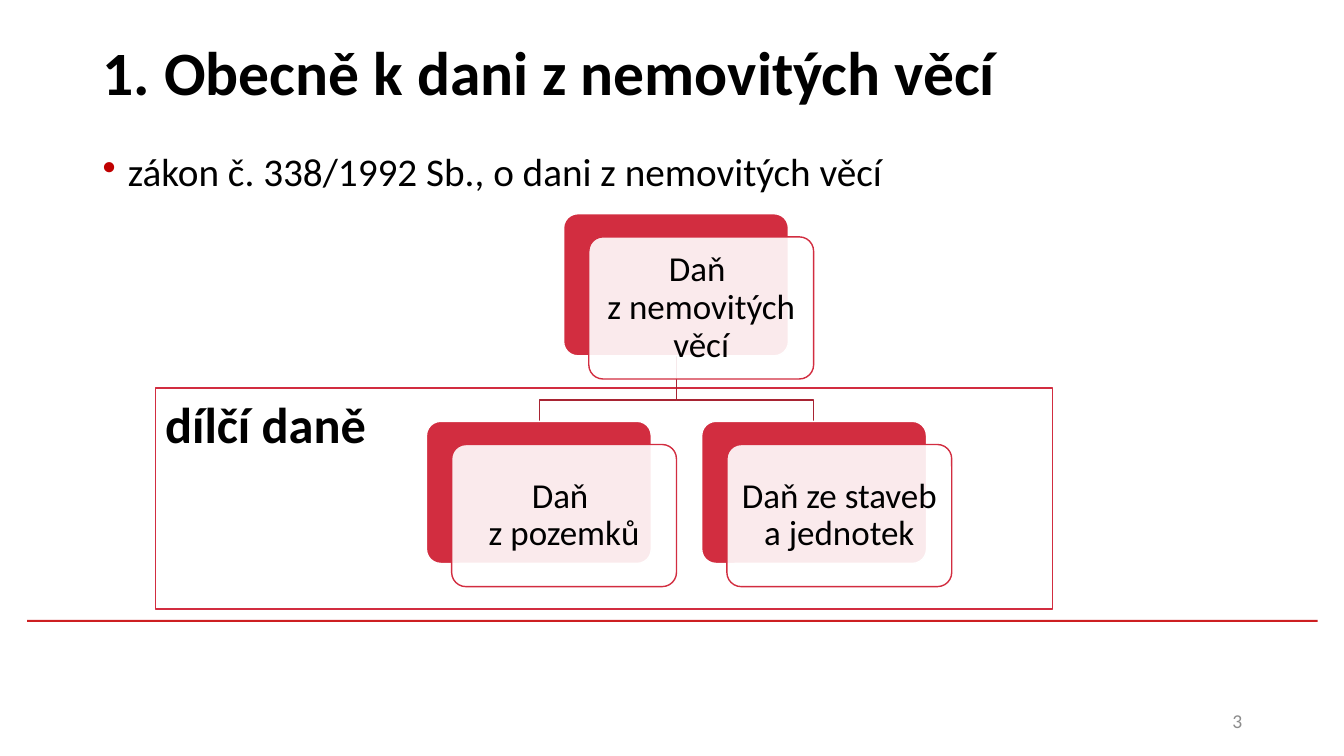
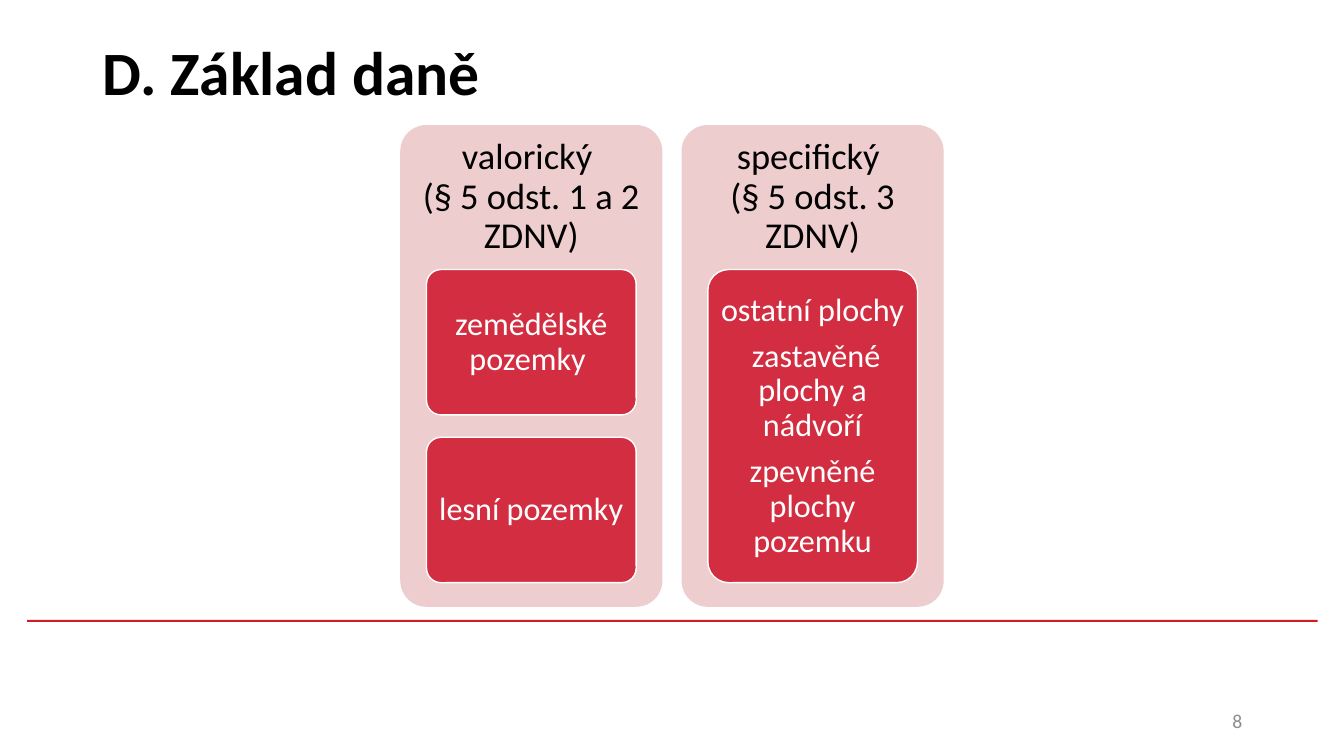
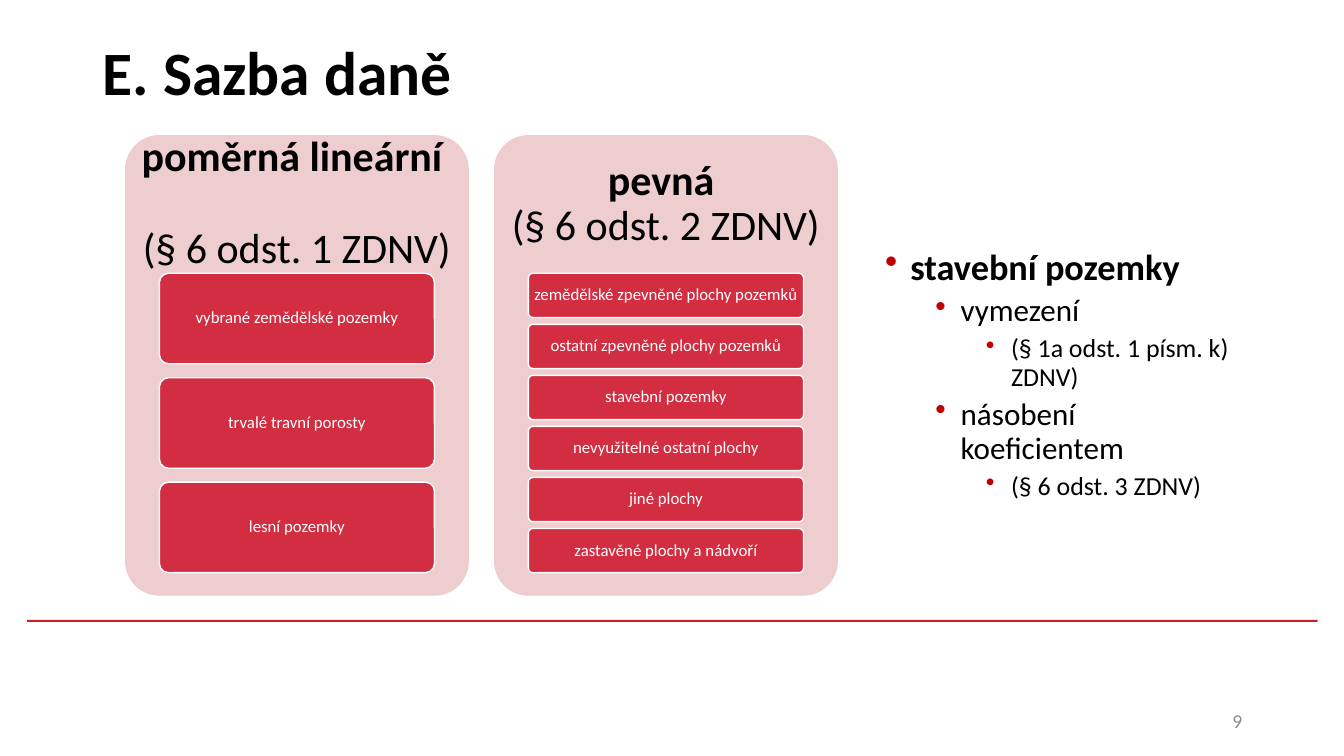
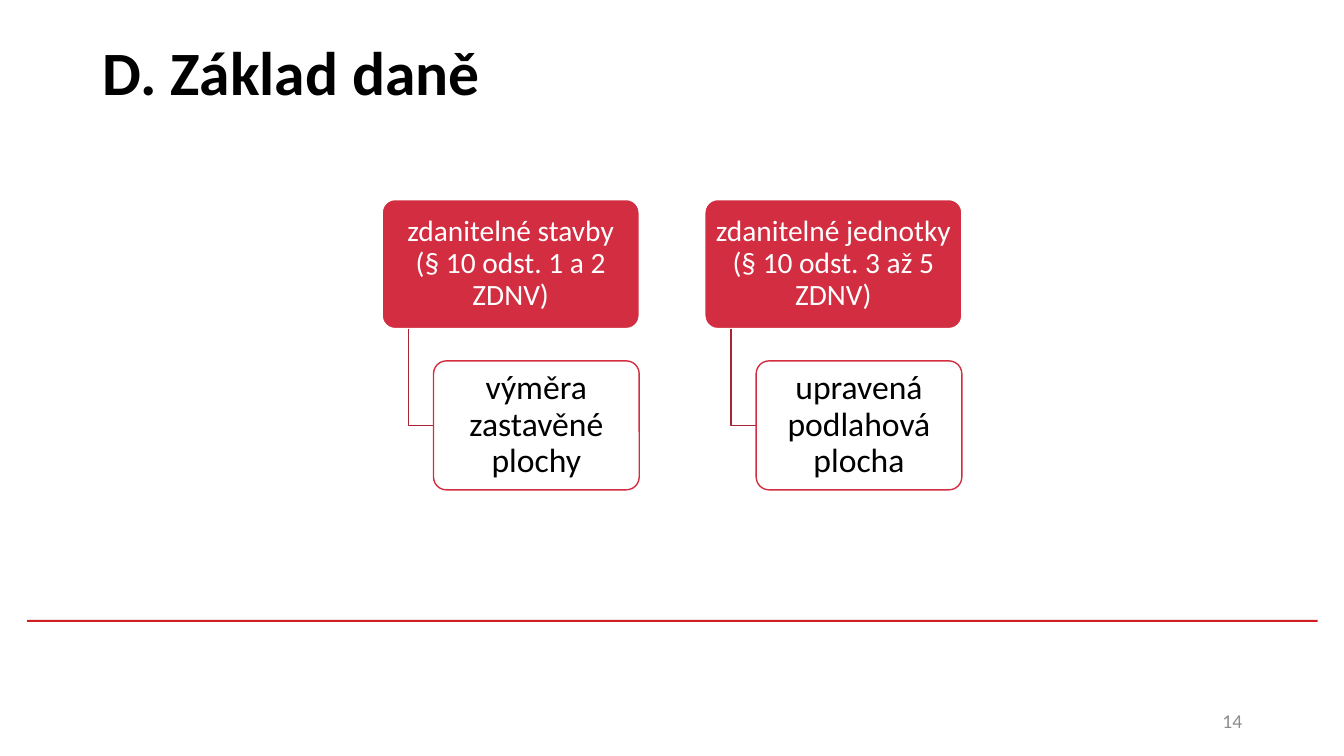
from dataclasses import dataclass
from typing import NamedTuple, Optional, Sequence

from lxml.etree import SubElement
from pptx import Presentation
from pptx.dml.color import RGBColor
from pptx.enum.shapes import MSO_SHAPE as Preset
from pptx.enum.text import MSO_ANCHOR as Anchor, PP_ALIGN as Align
from pptx.oxml.ns import qn
from pptx.util import Inches, Pt

FONT = "Calibri"
BLACK, WHITE, GREY = "000000", "FFFFFF", "8C8C8C"
RED, PINK, BRANCH, RULE, BULLET = "D22D40", "EECDCF", "A82433", "CD1F21", "C00000"
ITEM_GAP = 2 / 13


class Box(NamedTuple):
    left: float
    top: float
    width: float
    height: float

    def inches(self) -> list:
        return [Inches(length) for length in self]


@dataclass
class Para:
    text: str
    size: Optional[float] = None
    bold: Optional[bool] = None
    level: int = 0
    before: float = 0
    after: float = 0


@dataclass
class Column:
    header: Sequence[Para]
    items: Sequence[Sequence[Para]]


@dataclass
class Branch:
    head: str
    leaf: str


def rgb(color: str) -> RGBColor:
    return RGBColor.from_string(color)


def add_bullet(paragraph, level: int) -> None:
    props = paragraph._p.get_or_add_pPr()
    props.set("marL", str(Inches(0.25 + 0.5 * level)))
    props.set("indent", str(Inches(-0.25)))
    SubElement(SubElement(props, qn("a:buClr")), qn("a:srgbClr")).set("val", BULLET)
    SubElement(props, qn("a:buChar")).set("char", "•")


def write(frame, paras: Sequence[Para], *, size: float = 18, color: str = BLACK,
          bold: bool = False, align=Align.CENTER, anchor=Anchor.MIDDLE,
          inset: tuple = (0.1, 0.05), spacing: float = 0.9, bullets: bool = False) -> None:
    frame.word_wrap = True
    frame.vertical_anchor = anchor
    frame.margin_left = frame.margin_right = Inches(inset[0])
    frame.margin_top = frame.margin_bottom = Inches(inset[1])
    for index, para in enumerate(paras):
        paragraph = frame.add_paragraph() if index else frame.paragraphs[0]
        paragraph.text = para.text
        paragraph.alignment = align
        paragraph.line_spacing = spacing
        paragraph.space_after = Pt(para.after)
        if index:
            paragraph.space_before = Pt(para.before)
        if bullets:
            paragraph.level = para.level
            add_bullet(paragraph, para.level)
        for run in paragraph.runs:
            run.font.name = FONT
            run.font.size = Pt(para.size or size)
            run.font.bold = bold if para.bold is None else para.bold
            run.font.color.rgb = rgb(color)


def add_text(slide, box: Box, paras: Sequence[Para], **style) -> None:
    write(slide.shapes.add_textbox(*box.inches()).text_frame, paras, **style)


def add_panel(slide, box: Box, fill: str, line: Optional[str] = None, *,
              preset=Preset.ROUNDED_RECTANGLE, alpha: Optional[int] = None):
    panel = slide.shapes.add_shape(preset, *box.inches())
    panel.shadow.inherit = False
    if preset == Preset.ROUNDED_RECTANGLE:
        panel.adjustments[0] = 0.1
    panel.fill.solid()
    panel.fill.fore_color.rgb = rgb(fill)
    if alpha:
        tint = panel._element.spPr.find(qn("a:solidFill"))[0]
        SubElement(tint, qn("a:alpha")).set("val", str(alpha * 1000))
    if line:
        panel.line.color.rgb = rgb(line)
        panel.line.width = Pt(1)
    else:
        panel.line.fill.background()
    return panel


def add_branch_line(slide, points: Sequence[tuple]) -> None:
    corners = [(Inches(x), Inches(y)) for x, y in points]
    outline = slide.shapes.build_freeform(*corners[0])
    outline.add_line_segments(corners[1:], close=False)
    branch = outline.convert_to_shape()
    branch.shadow.inherit = False
    branch.fill.background()
    branch.line.color.rgb = rgb(BRANCH)
    branch.line.width = Pt(1)


def add_page(deck, title: str, number: int):
    slide = deck.slides.add_slide(deck.slide_layouts[6])
    add_panel(slide, Box(0.27, 6.15, 12.8, 0.02), RULE, preset=Preset.RECTANGLE)
    add_text(slide, Box(0.92, 0.02, 11.5, 1.45), [Para(title)],
             size=44, bold=True, align=Align.LEFT)
    add_text(slide, Box(9.42, 6.95, 3, 0.4), [Para(str(number))],
             size=14, color=GREY, align=Align.RIGHT, spacing=1)
    return slide


def add_tax_node(slide, left: float, top: float, label: str) -> None:
    width, height = 2.23, 1.41
    add_panel(slide, Box(left, top, width, height), RED, WHITE)
    front = add_panel(slide, Box(left + 0.25, top + 0.23, width, height), WHITE, RED, alpha=90)
    write(front.text_frame, [Para(label)], size=25, inset=(0.1, 0.1))


def add_column(slide, card: Box, column: Column, *, header_size: float, header_inset: float,
               item_size: float, item_inset: tuple) -> None:
    add_panel(slide, card, PINK)
    add_text(slide, card._replace(height=card.height * 0.3), column.header,
             size=header_size, inset=(header_inset, header_inset))
    count = len(column.items)
    height = card.height * 0.65 / (count + ITEM_GAP * (count - 1))
    for row, item in enumerate(column.items):
        top = card.top + card.height * 0.3 + row * height * (1 + ITEM_GAP)
        area = Box(card.left + card.width * 0.1, top, card.width * 0.8, height)
        write(add_panel(slide, area, RED, WHITE).text_frame, item,
              size=item_size, color=WHITE, inset=item_inset)


def add_columns(slide, first: Box, step: float, columns: Sequence[Column], **style) -> None:
    for index, column in enumerate(columns):
        add_column(slide, first._replace(left=first.left + index * step), column, **style)


def build_overview(deck) -> None:
    slide = add_page(deck, "1. Obecně k dani z nemovitých věcí", 3)
    add_text(slide, Box(0.92, 1.47, 11.5, 4.57),
             [Para("zákon č. 338/1992 Sb., o dani z nemovitých věcí")],
             size=28, align=Align.LEFT, anchor=Anchor.TOP, bullets=True)
    partial_taxes = add_panel(slide, Box(1.54, 3.85, 8.9, 2.19), WHITE, RED,
                              preset=Preset.RECTANGLE)
    write(partial_taxes.text_frame, [Para("dílčí daně")], size=36, bold=True,
          align=Align.LEFT, anchor=Anchor.TOP, spacing=1)
    for child_middle in (8.07, 5.35):
        add_branch_line(slide, [(6.71, 3.53), (6.71, 3.97),
                                (child_middle, 3.97), (child_middle, 4.18)])
    add_tax_node(slide, 5.59, 2.12, "Daň \nz nemovitých věcí")
    add_tax_node(slide, 4.23, 4.18, "Daň \nz pozemků")
    add_tax_node(slide, 6.96, 4.18, "Daň ze staveb a jednotek")


def build_land_base(deck) -> None:
    slide = add_page(deck, "D. Základ daně", 8)
    columns = [
        Column([Para("valorický \n(§ 5 odst. 1 a 2 ZDNV)")],
               [[Para("zemědělské pozemky ")], [Para("lesní pozemky")]]),
        Column([Para("specifický \n(§ 5 odst. 3 ZDNV)")],
               [[Para("ostatní plochy", after=8),
                 Para(" zastavěné plochy a nádvoří", after=8),
                 Para("zpevněné plochy pozemku")]]),
    ]
    add_columns(slide, Box(3.97, 1.24, 2.6, 4.78), 2.79, columns, header_size=26,
                header_inset=0.11, item_size=23, item_inset=(0.06, 0.05))


def build_rates(deck) -> None:
    slide = add_page(deck, "E. Sazba daně", 9)
    proportional = ["vybrané zemědělské pozemky", "trvalé travní porosty", "lesní pozemky"]
    fixed = ["zemědělské zpevněné plochy pozemků", "ostatní zpevněné plochy pozemků",
             "stavební pozemky", "nevyužitelné ostatní plochy", "jiné plochy",
             "zastavěné plochy a nádvoří"]
    columns = [
        Column([Para("poměrná lineární ", bold=True, after=33), Para("(§ 6 odst. 1 ZDNV)")],
               [[Para(name)] for name in proportional]),
        Column([Para("pevná ", bold=True), Para("(§ 6 odst. 2 ZDNV)")],
               [[Para(name)] for name in fixed]),
    ]
    add_columns(slide, Box(1.24, 1.34, 3.41, 4.57), 3.66, columns, header_size=30,
                header_inset=0.12, item_size=12, item_inset=(0.03, 0.03))
    building_land = [
        Para("stavební pozemky", 25.9, True),
        Para("vymezení", 22.2, level=1, before=5),
        Para("(§ 1a odst. 1 písm. k) ZDNV)", 18.5, level=2, before=5),
        Para("násobení koeficientem", 22.2, level=1, before=5),
        Para("(§ 6 odst. 3 ZDNV)", 18.5, level=2, before=5),
    ]
    add_text(slide, Box(8.68, 2.42, 3.73, 2.41), building_land,
             align=Align.LEFT, anchor=Anchor.TOP, bullets=True)


def build_building_base(deck) -> None:
    slide = add_page(deck, "D. Základ daně", 14)
    branches = [
        Branch("zdanitelné stavby\n(§ 10 odst. 1 a 2 ZDNV)", "výměra zastavěné plochy"),
        Branch("zdanitelné jednotky\n(§ 10 odst. 3 až 5 ZDNV)", "upravená podlahová plocha"),
    ]
    for index, branch in enumerate(branches):
        left = 3.79 + index * 3.2
        head = add_panel(slide, Box(left, 1.98, 2.55, 1.28), RED, WHITE)
        write(head.text_frame, [Para(branch.head)], size=21, color=WHITE, inset=(0.04, 0.03))
        stem, leaf_left = left + 0.26, left + 0.51
        add_branch_line(slide, [(stem, 3.26), (stem, 4.22), (leaf_left, 4.22)])
        leaf = add_panel(slide, Box(leaf_left, 3.58, 2.04, 1.28), WHITE, RED, alpha=90)
        write(leaf.text_frame, [Para(branch.leaf)], size=24, inset=(0.05, 0.03))


def main() -> None:
    """Build the property tax slides and save them."""
    deck = Presentation()
    deck.slide_width, deck.slide_height = Inches(13.33), Inches(7.5)
    build_overview(deck)
    build_land_base(deck)
    build_rates(deck)
    build_building_base(deck)
    deck.save("out.pptx")


if __name__ == "__main__":
    main()
